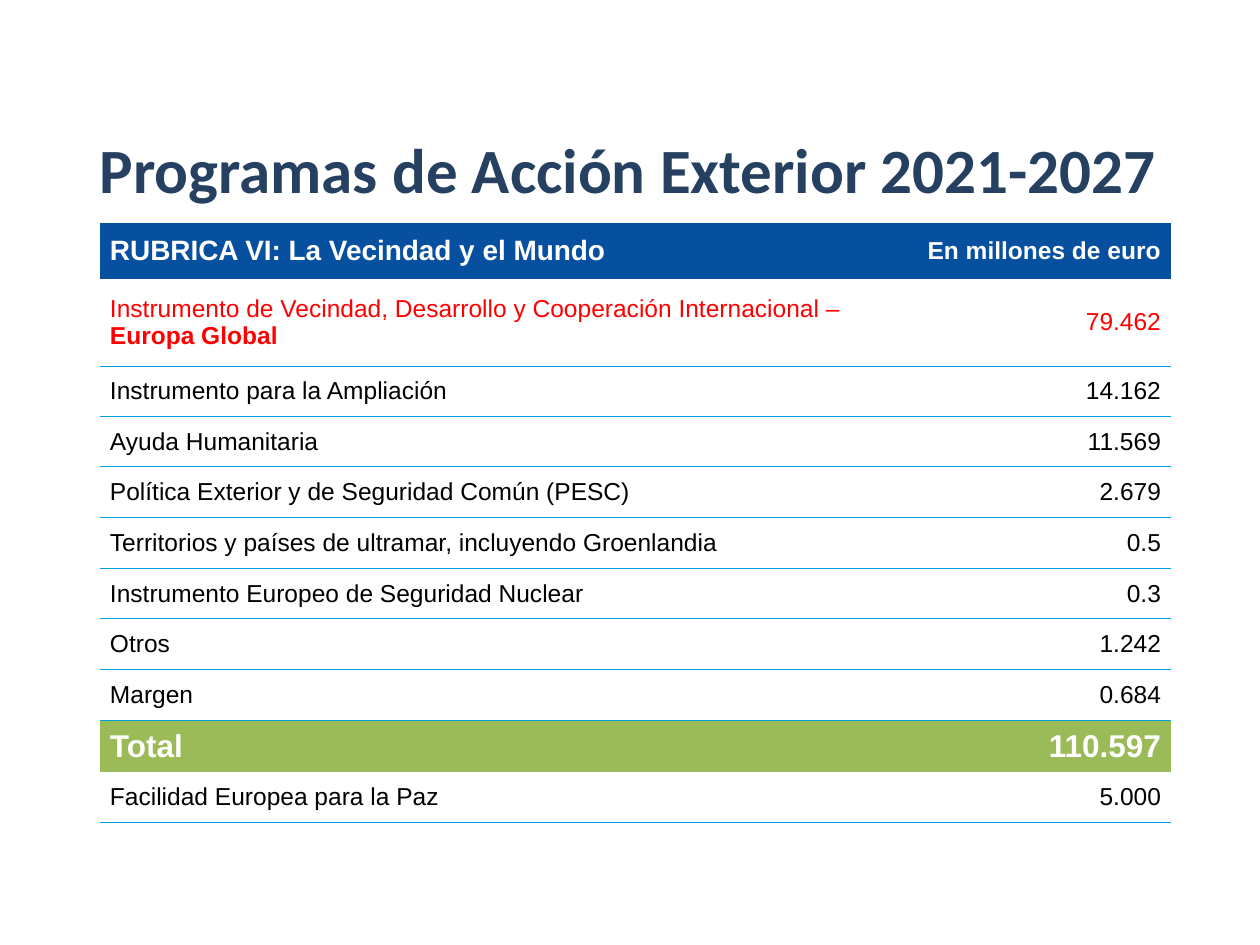
from lxml import etree
from pptx import Presentation
from pptx.dml.color import RGBColor
from pptx.enum.text import MSO_ANCHOR, PP_ALIGN
from pptx.oxml.ns import qn
from pptx.util import Pt

PX = 914400 / 126
MIDDLE = MSO_ANCHOR.MIDDLE
LEFT, CENTER, RIGHT = PP_ALIGN.LEFT, PP_ALIGN.CENTER, PP_ALIGN.RIGHT
WHITE, BLACK, RED = "FFFFFF", "000000", "FF0000"
NAVY, BLUE, GREEN, CYAN = "254061", "06509F", "9BBB59", "00A1DE"


def px(*lengths):
    return [round(length * PX) for length in lengths]


def add_run(paragraph, text, size, color, bold=False, font="Arial"):
    run = paragraph.add_run()
    run.text = text
    run.font.name, run.font.size, run.font.bold = font, Pt(size), bold
    run.font.color.rgb = RGBColor.from_string(color)


prs = Presentation()
prs.slide_width, prs.slide_height = px(1260, 945)
slide = prs.slides.add_slide(prs.slide_layouts[6])

# Title
title = slide.shapes.add_textbox(*px(25, 112, 1206, 112)).text_frame
title.word_wrap = True
title.vertical_anchor = MIDDLE
heading = title.paragraphs[0]
heading.alignment = CENTER
add_run(heading, "Programas de Acción Exterior 2021-2027", 36, NAVY, True, "Calibri")

# Budget lines: label runs (text, bold), amount, label size, amount size, colour, fill
instruments = [
    ("Instrumento para la Ampliación", "14.162"),
    ("Ayuda Humanitaria", "11.569"),
    ("Política Exterior y de Seguridad Común (PESC)", "2.679"),
    ("Territorios y países de ultramar, incluyendo Groenlandia", "0.5"),
    ("Instrumento Europeo de Seguridad Nuclear", "0.3"),
    ("Otros", "1.242"),
    ("Margen", "0.684"),
]
global_europe = [
    ("Instrumento de Vecindad, Desarrollo y Cooperación Internacional – ", False),
    ("Europa Global", True),
]
budget = [
    ([("RUBRICA VI: La Vecindad y el Mundo", True)],
     "En millones de euro", 16, 14, WHITE, BLUE),
    (global_europe, "79.462", 14, 14, RED, WHITE),
    *[([(label, False)], amount, 14, 14, BLACK, WHITE) for label, amount in instruments],
    ([("Total", True)], "110.597", 18, 18, WHITE, GREEN),
    ([("Facilidad Europea para la Paz", False)], "5.000", 14, 14, BLACK, WHITE),
]
row_heights = [56, 87, 51, 50, 51, 51, 50, 51, 51, 51, 51]
column_widths = [774, 297]

# Table grid
table = slide.shapes.add_table(
    len(budget), 2, *px(100, 223, sum(column_widths), sum(row_heights))).table
for column, width in zip(table.columns, px(*column_widths)):
    column.width = width
for row, height in zip(table.rows, px(*row_heights)):
    row.height = height

# Table cells
for r, (label, amount, label_size, amount_size, color, fill) in enumerate(budget):
    ruled_below = fill == WHITE
    ruled_above = r > 0 and budget[r - 1][-1] == WHITE
    sides = [("lnL", False), ("lnR", False), ("lnT", ruled_above), ("lnB", ruled_below)]
    contents = [
        (label, label_size, LEFT),
        ([(amount, not ruled_below)], amount_size, RIGHT),
    ]
    for c, (runs, size, alignment) in enumerate(contents):
        cell = table.cell(r, c)
        cell.fill.solid()
        cell.fill.fore_color.rgb = RGBColor.from_string(fill)
        cell.vertical_anchor = MIDDLE
        cell.margin_left, cell.margin_right = px(10, 10)
        cell.margin_top, cell.margin_bottom = px(6, 6)
        paragraph = cell.text_frame.paragraphs[0]
        paragraph.alignment = alignment
        for text, bold in runs:
            add_run(paragraph, text, size, color, bold)

        # Thin rules between rows, no other borders
        properties = cell._tc.get_or_add_tcPr()
        for position, (side, ruled) in enumerate(sides):
            line = etree.Element(qn(f"a:{side}"), w=str(Pt(0.5)))
            if ruled:
                solid = etree.SubElement(line, qn("a:solidFill"))
                etree.SubElement(solid, qn("a:srgbClr"), val=CYAN)
            else:
                etree.SubElement(line, qn("a:noFill"))
            properties.insert(position, line)

prs.save("out.pptx")
